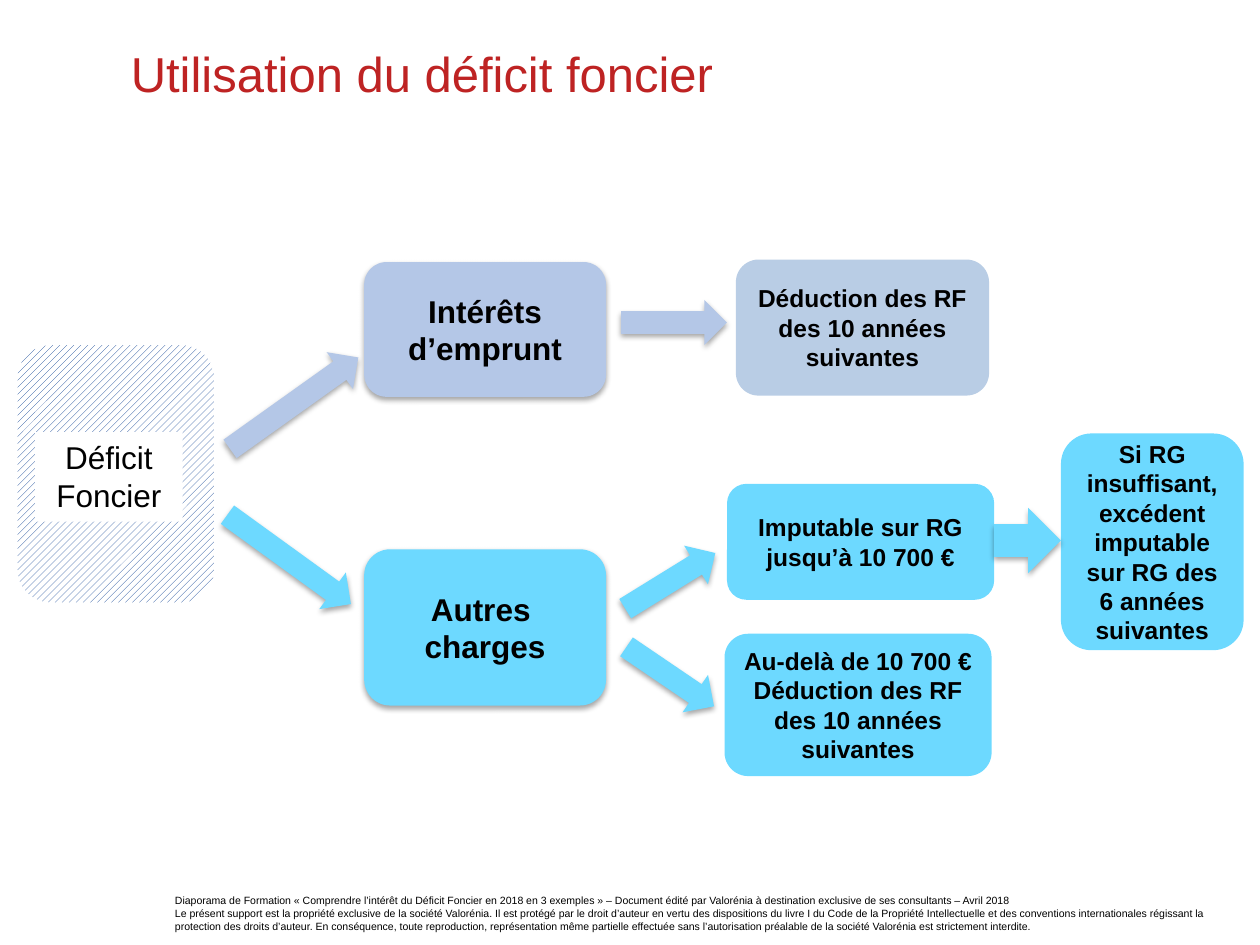
from dataclasses import dataclass

import pptx
import pptx.dml.color
import pptx.enum.dml
import pptx.enum.shapes
import pptx.enum.text
import pptx.oxml
import pptx.oxml.ns
import pptx.util

SHAPE = pptx.enum.shapes.MSO_SHAPE
ANCHOR = pptx.enum.text.MSO_ANCHOR
ALIGN = pptx.enum.text.PP_ALIGN
COLUMNS, ROWS = 100, 75  # grid cells across and down the slide


@dataclass(frozen=True)
class Theme:
    font: str = "Arial"
    ink: str = "000000"
    paper: str = "FFFFFF"
    title: str = "BE2323"
    hatch: str = "0E4194"
    interest: str = "B4C7E7"
    deduction: str = "B9CDE5"
    charges: str = "6DD9FF"
    title_size: int = 28
    stage_size: int = 18
    outcome_size: int = 14
    footer_size: int = 6


THEME = Theme()


@dataclass(frozen=True)
class Area:
    """Left, top, width and height in grid cells."""
    left: float
    top: float
    width: float
    height: float


@dataclass(frozen=True)
class Box:
    area: Area
    text: str
    fill: str
    size: int = THEME.outcome_size
    shadow: bool = False


@dataclass(frozen=True)
class Arrow:
    area: Area
    fill: str
    rotation: float = 0


presentation = pptx.Presentation()
presentation.slide_width = pptx.util.Inches(10)
presentation.slide_height = pptx.util.Inches(7.5)
slide = presentation.slides.add_slide(presentation.slide_layouts[6])


def color(value: str) -> pptx.dml.color.RGBColor:
    return pptx.dml.color.RGBColor.from_string(value)


def place(area: Area) -> tuple[int, int, int, int]:
    column = presentation.slide_width / COLUMNS
    row = presentation.slide_height / ROWS
    return (round(area.left * column), round(area.top * row),
            round(area.width * column), round(area.height * row))


def add_preset(kind: SHAPE, area: Area, fill: str, shadow: bool = False):
    shape = slide.shapes.add_shape(kind, *place(area))
    shape.fill.solid()
    shape.fill.fore_color.rgb = color(fill)
    shape.line.fill.background()
    shape.shadow.inherit = False
    if shadow:
        effects = shape._element.spPr.find(pptx.oxml.ns.qn("a:effectLst"))
        effects.append(pptx.oxml.parse_xml(
            f'<a:outerShdw {pptx.oxml.ns.nsdecls("a")} blurRad="40000" dist="23000" '
            'dir="5400000" rotWithShape="0"><a:srgbClr val="000000">'
            '<a:alpha val="35000"/></a:srgbClr></a:outerShdw>'))
    return shape


def write(shape, text: str, size: int, ink: str = THEME.ink, bold: bool = False,
          align: ALIGN = ALIGN.CENTER, anchor: ANCHOR = ANCHOR.MIDDLE) -> None:
    frame = shape.text_frame
    frame.word_wrap = True
    frame.vertical_anchor = anchor
    paragraph = frame.paragraphs[0]
    paragraph.text = text
    paragraph.alignment = align
    paragraph.font.name = THEME.font
    paragraph.font.size = pptx.util.Pt(size)
    paragraph.font.bold = bold
    paragraph.font.color.rgb = color(ink)


def add_box(box: Box) -> None:
    shape = add_preset(SHAPE.ROUNDED_RECTANGLE, box.area, box.fill, box.shadow)
    write(shape, box.text, box.size, bold=True)


def add_arrow(arrow: Arrow) -> None:
    shape = add_preset(SHAPE.RIGHT_ARROW, arrow.area, arrow.fill, shadow=True)
    shape.rotation = arrow.rotation


# Footer and title
footer = slide.shapes.add_textbox(*place(Area(12.9, 70.5, 85.8, 4.3)))
write(footer,
      "Diaporama de Formation « Comprendre l’intérêt du Déficit Foncier en 2018 en "
      "3 exemples » – Document édité par Valorénia à destination exclusive de ses "
      "consultants – Avril 2018\v"
      "Le présent support est la propriété exclusive de la société Valorénia. Il est "
      "protégé par le droit d’auteur en vertu des dispositions du livre I du Code de la "
      "Propriété Intellectuelle et des conventions internationales régissant la "
      "protection des droits d’auteur. En conséquence, toute reproduction, "
      "représentation même partielle effectuée sans l’autorisation préalable de la "
      "société Valorénia est strictement interdite.",
      THEME.footer_size, align=ALIGN.LEFT, anchor=ANCHOR.TOP)
title = slide.shapes.add_textbox(*place(Area(9.4, 0.9, 61.7, 9.8)))
write(title, "Utilisation du déficit foncier", THEME.title_size, THEME.title,
      align=ALIGN.LEFT)

# Starting point: hatched block with a white label
block = add_preset(SHAPE.ROUNDED_RECTANGLE, Area(-1, 29.8, 20.4, 15.6), THEME.paper)
block.rotation = 270
block.fill.patterned()
block.fill.pattern = pptx.enum.dml.MSO_PATTERN.WIDE_UPWARD_DIAGONAL
block.fill.fore_color.rgb = color(THEME.hatch)
block.fill.back_color.rgb = color(THEME.paper)
label = add_preset(SHAPE.RECTANGLE, Area(2.8, 34.3, 11.7, 7.1), THEME.paper)
write(label, "Déficit Foncier", THEME.stage_size, anchor=ANCHOR.TOP)

# Two kinds of expense, then what each one leads to
STAGE_LEFT, STAGE_WIDTH = 28.9, 19.2
OUTCOME_WIDTH = 21.2
BOXES = [
    Box(Area(STAGE_LEFT, 20.8, STAGE_WIDTH, 10.7), "Intérêts\vd’emprunt",
        THEME.interest, THEME.stage_size, shadow=True),
    Box(Area(STAGE_LEFT, 43.6, STAGE_WIDTH, 12.4), "Autres \vcharges",
        THEME.charges, THEME.stage_size, shadow=True),
    Box(Area(58.4, 20.6, 20.1, 10.8), "Déduction des RF des 10 années suivantes",
        THEME.deduction),
    Box(Area(57.7, 38.4, OUTCOME_WIDTH, 9.2), "Imputable sur RG jusqu’à 10 700 €",
        THEME.charges),
    Box(Area(57.5, 50.3, OUTCOME_WIDTH, 11.3),
        "Au-delà de 10 700 €\vDéduction des RF des 10 années suivantes", THEME.charges),
    Box(Area(84.2, 34.4, 14.5, 17.2),
        "Si RG insuffisant, excédent imputable sur RG des 6 années suivantes",
        THEME.charges),
]
for box in BOXES:
    add_box(box)

# Block arrows between the steps
THICKNESS, SHORT = 3.6, 8.4
ARROWS = [
    Arrow(Area(17.1, 30.2, 12.5, THICKNESS), THEME.interest, 324.5),
    Arrow(Area(16.9, 42.6, 12.1, THICKNESS), THEME.charges, 35.9),
    Arrow(Area(49.3, 23.8, SHORT, THICKNESS), THEME.interest),
    Arrow(Area(49, 44.3, SHORT, THICKNESS), THEME.charges, 328.3),
    Arrow(Area(49, 51.9, SHORT, THICKNESS), THEME.charges, 34.2),
    Arrow(Area(78.9, 40.3, 5.3, 5.2), THEME.charges),
]
for arrow in ARROWS:
    add_arrow(arrow)

presentation.save("out.pptx")
